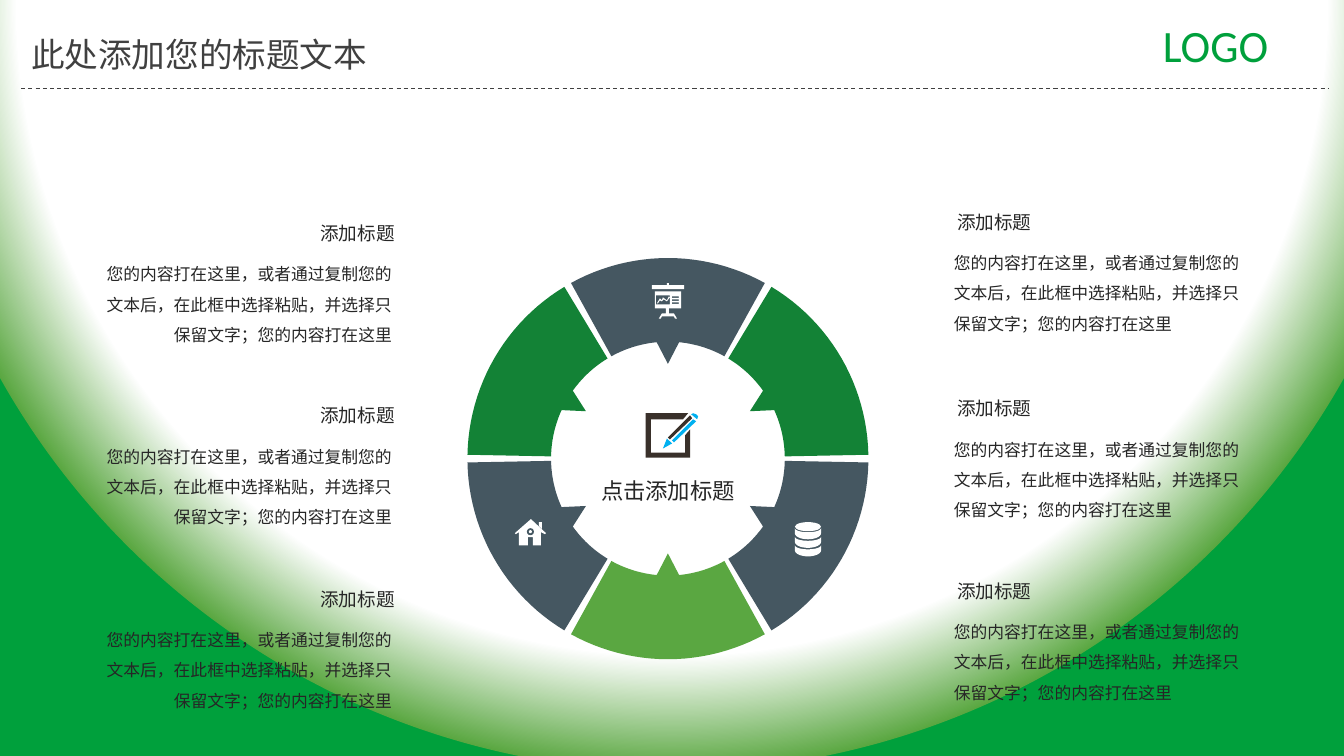
from dataclasses import dataclass
from math import cos, pi, radians, sin

from lxml.etree import SubElement
from pptx import Presentation
from pptx.dml.color import RGBColor
from pptx.enum.dml import MSO_LINE
from pptx.enum.shapes import MSO_CONNECTOR, MSO_SHAPE
from pptx.enum.text import MSO_ANCHOR, MSO_AUTO_SIZE, PP_ALIGN
from pptx.oxml import parse_xml
from pptx.oxml.ns import nsdecls, qn
from pptx.util import Inches, Pt

COLUMNS, ROWS = 133.4, 75
HEADING = "添加标题"
BODY = "您的内容打在这里，或者通过复制您的文本后，在此框中选择粘贴，并选择只保留文字；您的内容打在这里"


@dataclass(frozen=True)
class Theme:
    """Colours, fonts, type sizes and grid cell of the slide."""
    cell: float = 0.1
    white: str = "FFFFFF"
    brand: str = "00A03C"
    leaf: str = "5AA741"
    forest: str = "138236"
    slate: str = "455761"
    ink: str = "262626"
    grey: str = "404040"
    frame: str = "39302A"
    pencil: str = "00B0F0"
    cjk: str = "Noto Sans CJK SC"
    latin: str = "Calibri"
    logo_size: float = 32
    title_size: float = 24
    centre_size: float = 16
    heading_size: float = 13.3
    body_size: float = 12


class Board:
    """Draws elements on one slide, measured in grid cells."""

    def __init__(self, theme):
        """Open a deck with one titled slide."""
        self.theme = theme
        self.deck = Presentation()
        self.deck.slide_width = self.cells(COLUMNS)
        self.deck.slide_height = self.cells(ROWS)
        self.slide = self.deck.slides.add_slide(self.deck.slide_layouts[5])

    def cells(self, count):
        """Turn grid cells into a length."""
        return Inches(count * self.theme.cell)

    def background(self, stops):
        """Fill the slide with a circular gradient centred above it."""
        self.slide.background.fill.solid()
        holder = self.slide.element.xpath("p:cSld/p:bg/p:bgPr")[0]
        stop_xml = "".join(
            f'<a:gs pos="{share * 1000}"><a:srgbClr val="{colour}"/></a:gs>'
            for share, colour in stops)
        holder.replace(holder[0], parse_xml(
            f'<a:gradFill {nsdecls("a")} rotWithShape="1"><a:gsLst>{stop_xml}</a:gsLst>'
            '<a:path path="circle"><a:fillToRect l="50000" t="-80000" r="50000" b="180000"/>'
            '</a:path></a:gradFill>'))

    def typeset(self, holder, words, size, colour, font, align, spacing=None):
        """Set and format the words of a text holder."""
        frame = holder.text_frame
        frame.text = words
        frame.word_wrap = True
        frame.vertical_anchor = MSO_ANCHOR.TOP
        frame.auto_size = MSO_AUTO_SIZE.SHAPE_TO_FIT_TEXT
        paragraph = frame.paragraphs[0]
        paragraph.alignment = align
        if spacing:
            paragraph.line_spacing = spacing
        for run in paragraph.runs:
            run.font.size = Pt(size)
            run.font.color.rgb = RGBColor.from_string(colour)
            run.font.name = font
            SubElement(run._r.get_or_add_rPr(), qn("a:ea"), typeface=font)

    def title(self, words, left, top, width, height):
        """Move the title placeholder and fill it."""
        title = self.slide.shapes.title
        title.left, title.top = self.cells(left), self.cells(top)
        title.width, title.height = self.cells(width), self.cells(height)
        self.typeset(title, words, self.theme.title_size, self.theme.grey,
                     self.theme.cjk, PP_ALIGN.LEFT)

    def label(self, words, area, size, align, colour=None, font=None,
              spacing=None, tight=False):
        """Add a text box."""
        holder = self.slide.shapes.add_textbox(*map(self.cells, area))
        if tight:
            frame = holder.text_frame
            frame.margin_left = frame.margin_right = self.cells(0.7)
            frame.margin_top = frame.margin_bottom = self.cells(0.3)
        self.typeset(holder, words, size, colour or self.theme.ink,
                     font or self.theme.cjk, align, spacing)

    def article(self, left, top, align):
        """Add a heading with its paragraph below."""
        self.label(HEADING, (left + 0.6, top, 30.7, 2.9),
                   self.theme.heading_size, align, tight=True)
        self.label(BODY, (left, top + 3, 31.3, 10.1),
                   self.theme.body_size, align, spacing=1.5)

    def rule(self, left, right, row):
        """Add a dashed horizontal line."""
        line = self.slide.shapes.add_connector(
            MSO_CONNECTOR.STRAIGHT, *map(self.cells, (left, row, right, row)))
        line.line.color.rgb = RGBColor.from_string(self.theme.grey)
        line.line.width = Pt(0.75)
        line.line.dash_style = MSO_LINE.DASH
        SubElement(line._element.spPr, qn("a:effectLst"))

    def paint(self, shape, colour):
        """Give a shape a flat fill without outline or shadow."""
        shape.shadow.inherit = False
        shape.fill.solid()
        shape.fill.fore_color.rgb = RGBColor.from_string(colour)
        shape.line.fill.background()

    def ellipse(self, area, colour):
        """Add a filled ellipse."""
        self.paint(self.slide.shapes.add_shape(MSO_SHAPE.OVAL, *map(self.cells, area)), colour)

    def outline(self, colour, *contours):
        """Add a filled outline; later contours cut holes."""
        first, *holes = [[(self.cells(x), self.cells(y)) for x, y in points]
                         for points in contours]
        builder = self.slide.shapes.build_freeform(*first[0], scale=1.0)
        builder.add_line_segments(first[1:], close=True)
        for hole in holes:
            builder.move_to(*hole[0])
            builder.add_line_segments(hole[1:], close=True)
        self.paint(builder.convert_to_shape(), colour)

    def segment(self, bearing, colour):
        """Add one ring segment with a pointer towards the centre."""
        def at(radius, angle):
            turn = radians(bearing + angle)
            return 66.3 + radius * sin(turn), 45.5 - radius * cos(turn)

        def arc(radius, start, end, steps=24):
            return [at(radius, start + (end - start) * step / steps)
                    for step in range(steps + 1)]

        half, pointer, outer, inner, tip = 28.9, 5.5, 19.9, 11.6, 9.4
        self.outline(colour, arc(outer, -half, half) + arc(inner, half, pointer)
                     + [at(tip, 0)] + arc(inner, -pointer, -half))

    def house(self):
        """Draw the house icon."""
        self.outline(self.theme.white, [
            (52.7, 51.5), (51.1, 52.9), (51.2, 53), (51.5, 52.8), (51.5, 54.1),
            (52.4, 54.1), (52.4, 53.3), (52.9, 53.3), (52.9, 54.1), (53.7, 54.1),
            (53.7, 52.8), (54.1, 53), (54.2, 52.9)])
        self.outline(self.theme.white, [(53.8, 52.5), (53.8, 51.8), (53.5, 51.8), (53.5, 52.2)])
        self.ellipse((52.3, 52.4, 0.7, 0.7), self.theme.slate)
        self.ellipse((52.5, 52.6, 0.3, 0.3), self.theme.white)

    def database(self):
        """Draw the stacked disk icon."""
        self.ellipse((78.9, 51.8, 2.6, 0.9), self.theme.white)
        turns = [pi * step / 16 for step in range(17)]
        for disk in range(3):
            row = 52.4 + 0.85 * disk
            upper = [(80.2 - 1.3 * cos(turn), row + 0.4 * sin(turn)) for turn in turns]
            lower = [(80.2 + 1.3 * cos(turn), row + 0.5 + 0.6 * sin(turn)) for turn in turns]
            self.outline(self.theme.white, upper + lower)

    def easel(self):
        """Draw the presentation board icon."""
        def block(left, top, right, bottom):
            return [(left, top), (right, top), (right, bottom), (left, bottom)]

        self.outline(self.theme.white, [
            (64.7, 28.3), (66.2, 28.3), (66.2, 28.1), (66.4, 28.1), (66.4, 28.3),
            (67.9, 28.3), (67.9, 28.7), (64.7, 28.7)])
        self.outline(
            self.theme.white,
            [(67.6, 30.6), (67.6, 28.9), (65, 28.9), (65, 30.6), (66.1, 30.6),
             (66.1, 31.1), (65.7, 31.1), (65.4, 31.6), (65.6, 31.6), (65.7, 31.4),
             (66.9, 31.4), (67, 31.6), (67.2, 31.6), (66.9, 31.1), (66.4, 31.1), (66.4, 30.6)],
            block(65.1, 29.3, 66.5, 30.2),
            *(block(66.7, row, 67.4, row + 0.15) for row in (29.4, 29.7, 30)))
        self.outline(self.theme.white, [
            (65.2, 30.1), (65.5, 29.6), (65.7, 29.8), (65.8, 29.5), (66.2, 29.8),
            (66.4, 29.4), (66.5, 29.5), (66.2, 29.9), (65.9, 29.7), (65.7, 29.9),
            (65.5, 29.8), (65.3, 30.1)])

    def notepad(self):
        """Draw the pencil and pad icon."""
        blue, dark = self.theme.pencil, self.theme.frame
        for colour, points in (
                (blue, [(66.7, 44), (66.2, 43.5), (65.8, 44.5)]),
                (dark, [(68.5, 41.2), (66.3, 43.4), (66.5, 43.6), (68.7, 41.5)]),
                (blue, [(66.7, 43.7), (66.9, 43.9), (69.1, 41.8), (68.8, 41.6)]),
                (blue, [(68.6, 41.1), (68.8, 41), (69.1, 41.1), (69.3, 41.3), (69.2, 41.6)]),
                (dark, [(68, 44.9), (64.6, 44.9), (64.6, 41.6), (67.8, 41.6), (68.3, 41),
                        (64.1, 41), (64.1, 45.4), (68.5, 45.4), (68.5, 42.6), (68, 43.2)])):
            self.outline(colour, points)


def main():
    """Build and save the slide."""
    theme = Theme()
    board = Board(theme)
    board.background([(0, theme.white), (85, theme.white), (100, theme.leaf), (100, theme.brand)])
    board.title("此处添加您的标题文本", 2.1, 2.9, 48.8, 5)
    board.rule(2.1, 131.9, 8.8)
    board.label("LOGO", (111.6, 1.3, 18.1, 6.4), theme.logo_size, PP_ALIGN.CENTER,
                theme.brand, theme.latin)
    ring = (theme.slate, theme.forest, theme.slate, theme.leaf, theme.slate, theme.forest)
    for place, colour in enumerate(ring):
        board.segment(60 * place, colour)
    board.house()
    board.database()
    board.easel()
    board.notepad()
    board.label("点击添加标题", (57.7, 47, 17.2, 3.4), theme.centre_size,
                PP_ALIGN.CENTER, tight=True)
    for left, align, tops in ((8.6, PP_ALIGN.RIGHT, (21.7, 39.8, 58)),
                              (93.7, PP_ALIGN.LEFT, (20.6, 39.1, 57.2))):
        for top in tops:
            board.article(left, top, align)
    board.deck.save("out.pptx")


if __name__ == "__main__":
    main()
